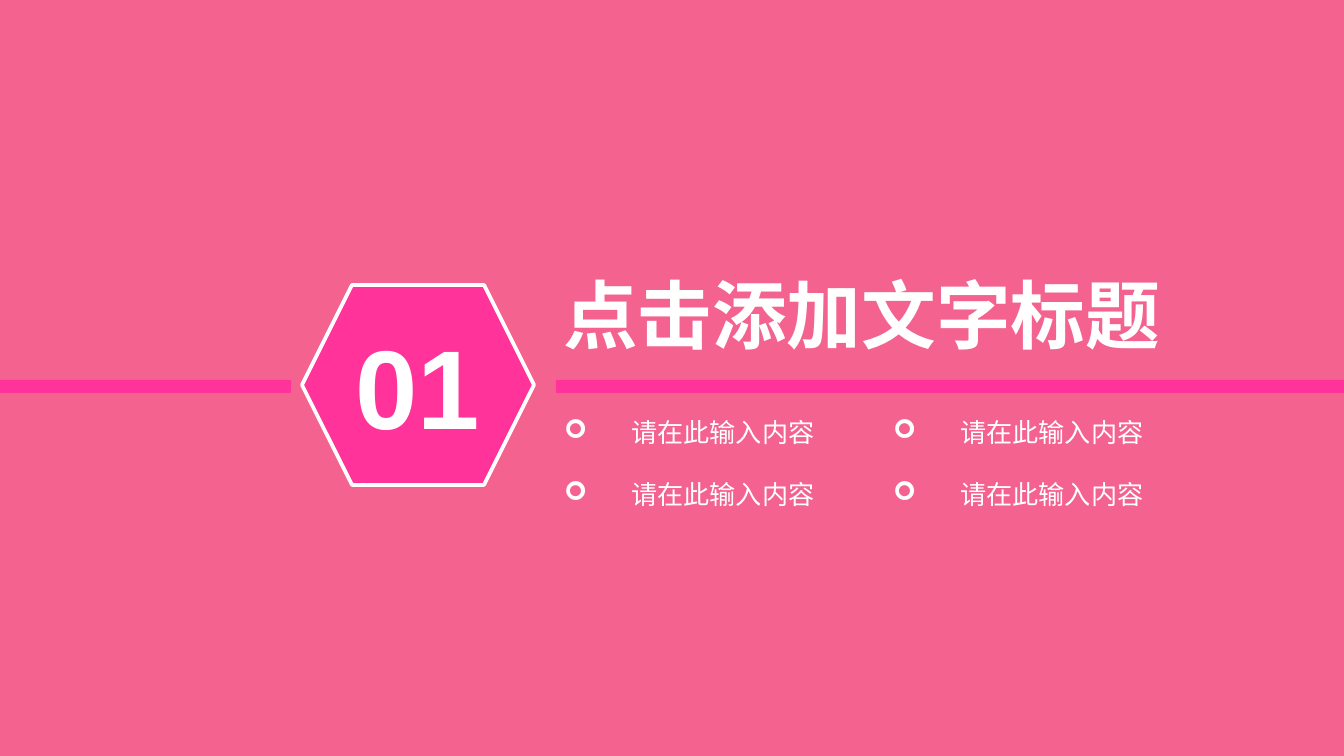
from itertools import product

from lxml.etree import SubElement
from pptx import Presentation
from pptx.dml.color import RGBColor
from pptx.enum.shapes import MSO_SHAPE as Preset
from pptx.enum.text import MSO_ANCHOR as Anchor, MSO_AUTO_SIZE as AutoSize, PP_ALIGN as Align
from pptx.oxml.ns import qn
from pptx.util import Emu, Pt

COLORS = {"background": "F4628F", "accent": "FF3399", "text": "FFFFFF"}
CJK_FONT = "Noto Sans CJK SC"
EMU_PER_PX = 914400 / 134.4
WIDTH, HEIGHT = 1344, 756


def px(length):
    """Turn pixels into EMU."""
    return Emu(round(length * EMU_PER_PX))


def color(name):
    """Look up a named colour."""
    return RGBColor.from_string(COLORS[name])


def write_text(shape, text, size, font=CJK_FONT, bold=False, align=Align.LEFT,
               anchor=Anchor.TOP, bullet=None, indent=0):
    """Fill a shape with one formatted paragraph."""
    frame = shape.text_frame
    frame.word_wrap = False
    frame.vertical_anchor = anchor
    paragraph = frame.paragraphs[0]
    paragraph.alignment = align
    run = paragraph.add_run()
    run.text = text
    run.font.size = Pt(size)
    run.font.bold = bold
    run.font.name = font
    run.font.color.rgb = color("text")
    SubElement(run.font._element, qn("a:ea")).set("typeface", font)
    if bullet:
        properties = paragraph._p.get_or_add_pPr()
        properties.set("marL", str(px(indent)))
        properties.set("indent", str(-px(indent)))
        SubElement(properties, qn("a:buFont")).set("typeface", "Wingdings")
        SubElement(properties, qn("a:buChar")).set("char", bullet)


def add_text(slide, box, text, **style):
    """Add a text box that grows with its text."""
    shape = slide.shapes.add_textbox(*map(px, box))
    write_text(shape, text, **style)
    shape.text_frame.auto_size = AutoSize.SHAPE_TO_FIT_TEXT


def add_accent(slide, preset, box):
    """Add a flat accent shape without an outline."""
    shape = slide.shapes.add_shape(preset, *map(px, box))
    shape.shadow.inherit = False
    shape.fill.solid()
    shape.fill.fore_color.rgb = color("accent")
    shape.line.fill.background()
    return shape


def add_band(slide, left, top, width, height, gap_start, gap_end):
    """Place a horizontal band that leaves a gap for the badge."""
    for start, end in ((0, gap_start), (gap_end, width)):
        add_accent(slide, Preset.RECTANGLE, (left + start, top, end - start, height))


def add_badge(slide, box, number):
    """Place the outlined hexagon with the section number."""
    badge = add_accent(slide, Preset.HEXAGON, box)
    badge.line.color.rgb = color("text")
    badge.line.width = Pt(2)
    write_text(badge, number, size=60, font="Arial", bold=True,
               align=Align.CENTER, anchor=Anchor.MIDDLE)


def add_topics(slide, left, top, width, height, topics, columns=2):
    """Place the bulleted topics in an even grid."""
    rows = len(topics) // columns
    item_width, item_height = 280, 46
    column_step = (width - item_width) // (columns - 1)
    row_step = (height - item_height) // (rows - 1)
    for (row, column), topic in zip(product(range(rows), range(columns)), topics):
        box = (left + column * column_step, top + row * row_step, item_width, item_height)
        add_text(slide, box, topic, size=14, bullet="➢", indent=67)


def add_section_slide(presentation, number, title, topics):
    """Build a section opener."""
    slide = presentation.slides.add_slide(presentation.slide_layouts[6])
    slide.background.fill.solid()
    slide.background.fill.fore_color.rgb = color("background")
    add_band(slide, 0, 380, WIDTH, 13, gap_start=291, gap_end=556)
    add_badge(slide, (302, 285, 232, 200), number)
    add_text(slide, (550, 262, 630, 104), title, size=40, bold=True)
    add_topics(slide, 551, 410, 609, 108, topics)


def main():
    """Create the presentation."""
    presentation = Presentation()
    presentation.slide_width, presentation.slide_height = px(WIDTH), px(HEIGHT)
    add_section_slide(presentation, "01", "点击添加文字标题", ["请在此输入内容"] * 4)
    presentation.save("out.pptx")


if __name__ == "__main__":
    main()
